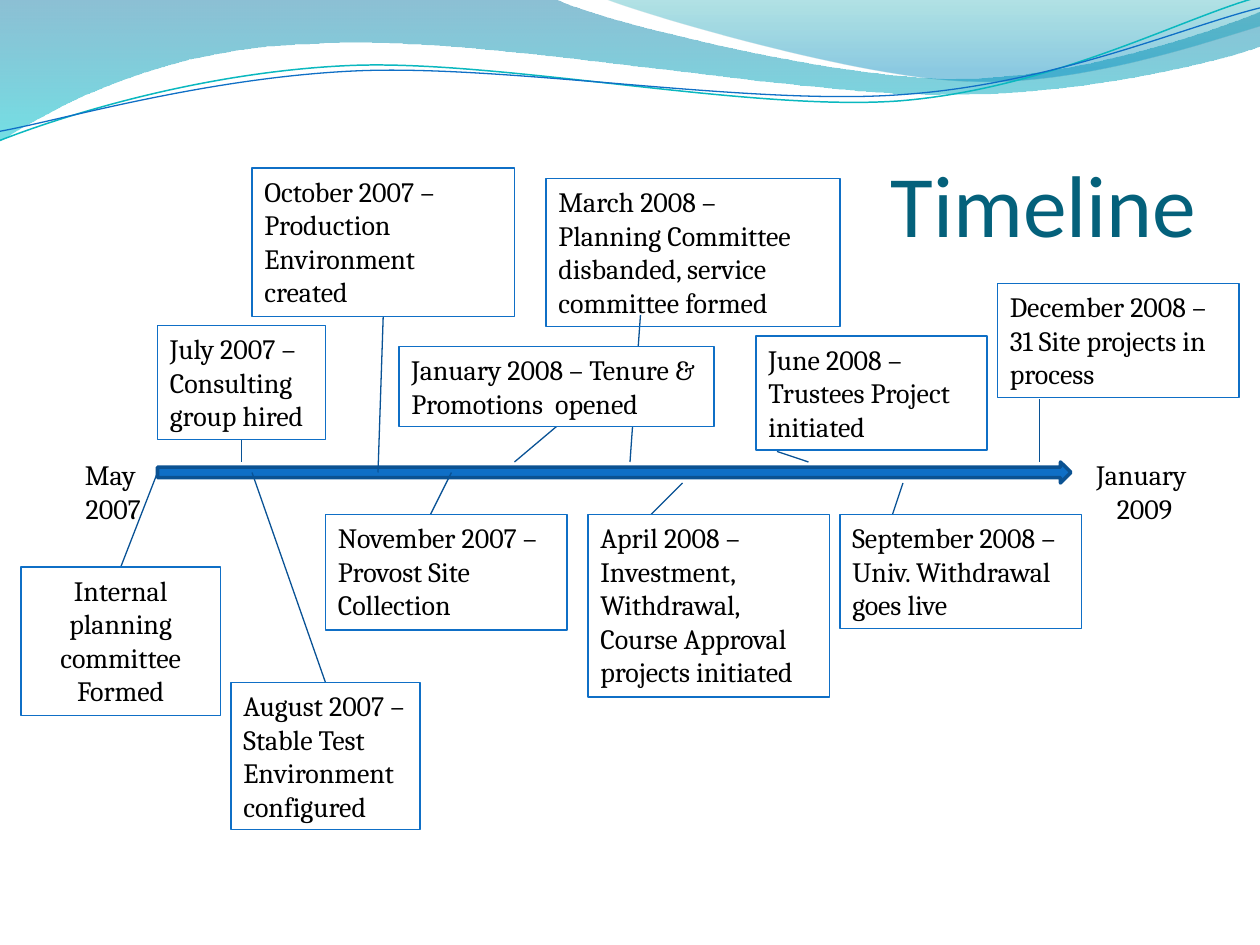
"""Build a project timeline slide with dated event boxes around a central arrow."""
from lxml import etree
from pptx import Presentation
from pptx import util as u
from pptx.dml.color import RGBColor
from pptx.enum import shapes, text
from pptx.oxml.ns import qn

PX = 914400 // 96
COLORS = {"title": "04617B", "text": "000000", "paper": "FFFFFF", "accent": "0F6FC6",
          "arrow_edge": "0B5292", "leader": "095295", "teal": "0AB8BF",
          "deep_blue": "0074A1", "aqua": "00C6CF", "sea": "00A1A9", "sky": "008BBF"}

WAVE_FILLS = [
    ([(0, 0), (422, -1), (457, 16, 637, 60, 728, 60), (819, 60, 920, 25, 960, 9),
      (961, 35), (944, 42, 835, 73, 716, 72), (597, 72, 367, 27, 247, 33),
      (124, 35, 44, 80, -1, 108)],
     [(0, "deep_blue", 45), (1, "aqua", 55)]),
    ([(460, -1), (489, 11, 655, 60, 738, 62), (822, 66, 923, 31, 960, 20), (960, 0)],
     [(0, "sea", 30), (0.8, "sky", 45)]),
]
WAVE_LINES = [
    ([(0, 107), (46, 89, 152, 55, 266, 50), (379, 45, 569, 85, 684, 77),
      (800, 68, 900, 14, 958, -2)], "teal", 0.85),
    ([(0, 100), (45, 92, 157, 59, 272, 54), (387, 49, 573, 81, 688, 72),
      (803, 64, 903, 20, 960, 6)], "accent", 0.75),
]
TITLE = ("Timeline", (48, 74, 864, 120))
ARROW = (120, 352, 696, 16)
ENDS = [("May\n 2007", (32, 344, 104, 61)), ("January  2009", (816, 344, 112, 61))]
EVENTS = [
    ("July 2007 – Consulting group hired", (120, 248, 128, 87), (184, 352, 184, 335)),
    ("August 2007 – Stable Test Environment configured", (176, 520, 144, 112),
     (192, 360, 248, 520)),
    ("Internal planning committee Formed", (16, 432, 152, 113), (120, 360, 92, 432)),
    ("October 2007 – \vProduction Environment created", (192, 128, 200, 113),
     (292, 241, 288, 360)),
    ("November 2007 – \vProvost Site Collection", (248, 392, 184, 88), (344, 360, 328, 392)),
    ("April 2008 – \vInvestment, Withdrawal, Course Approval projects initiated",
     (448, 392, 184, 139), (520, 368, 496, 392)),
    ("March 2008 –\vPlanning Committee disbanded, service committee formed",
     (416, 136, 224, 113), (480, 352, 488, 240)),
    ("January 2008 – Tenure & Promotions  opened", (304, 264, 240, 61), (392, 352, 424, 325)),
    ("June 2008 –\nTrustees Project initiated", (576, 256, 176, 87), (616, 352, 592, 344)),
    ("September 2008 –\vUniv. Withdrawal goes live", (640, 392, 184, 87),
     (688, 368, 680, 392)),
    ("December 2008 – \v31 Site projects in process", (760, 216, 184, 87),
     (792, 352, 792, 304)),
]
CENTERED = {"Internal planning committee Formed"}
FILLED = {"January 2008 – Tenure & Promotions  opened"}


def emu(lengths):
    return [u.Emu(length * PX) for length in lengths]


def rgb(name):
    return RGBColor.from_string(COLORS[name])


def set_line(shape, color, points):
    shape.line.color.rgb = rgb(color)
    shape.line.width = u.Pt(points)


def add_wave(slide, segments, close):
    start, *rest = segments
    corners = [emu(part[i:i + 2]) for part in rest for i in range(0, len(part), 2)]
    builder = slide.shapes.build_freeform(*emu(start))
    builder.add_line_segments(corners, close=close)
    wave = builder.convert_to_shape()
    wave.shadow.inherit = False
    steps = iter(list(wave.element.spPr.iter(qn("a:lnTo"))))
    for part in rest:
        first = next(steps)
        if len(part) == 6:
            first.tag = qn("a:cubicBezTo")
            for step in (next(steps), next(steps)):
                first.append(step[0])
                step.getparent().remove(step)
    return wave


def add_filled_wave(slide, segments, stops):
    wave = add_wave(slide, segments, True)
    wave.line.fill.background()
    wave.fill.gradient()
    wave.fill.gradient_angle = 270
    for stop, (position, color, _) in zip(wave.fill.gradient_stops, stops):
        stop.position = position
        stop.color.rgb = rgb(color)
    for node, (_, _, opacity) in zip(wave.element.spPr.iter(qn("a:srgbClr")), stops):
        etree.SubElement(node, qn("a:alpha"), val=str(opacity * 1000))


def add_line_wave(slide, segments, color, points):
    wave = add_wave(slide, segments, False)
    wave.fill.background()
    set_line(wave, color, points)


def style(frame, font, size, color, align):
    for para in frame.paragraphs:
        para.alignment = align
        para.font.name = font
        para.font.size = u.Pt(size)
        para.font.color.rgb = rgb(color)


def set_title(slide, words, place):
    title = slide.shapes.title
    title.left, title.top, title.width, title.height = emu(place)
    frame = title.text_frame
    frame.text = words
    frame.auto_size = text.MSO_AUTO_SIZE.NONE
    frame.vertical_anchor = text.MSO_ANCHOR.BOTTOM
    frame.margin_left = frame.margin_right = frame.margin_bottom = 0
    style(frame, "Calibri", 50, "title", text.PP_ALIGN.RIGHT)


def add_label(slide, words, place, centered):
    box = slide.shapes.add_textbox(*emu(place))
    frame = box.text_frame
    frame.word_wrap = True
    frame.auto_size = text.MSO_AUTO_SIZE.SHAPE_TO_FIT_TEXT
    frame.text = words
    align = text.PP_ALIGN.CENTER if centered else text.PP_ALIGN.LEFT
    style(frame, "Cambria", 16, "text", align)
    return box


def add_arrow(slide):
    arrow = slide.shapes.add_shape(shapes.MSO_SHAPE.RIGHT_ARROW, *emu(ARROW))
    arrow.shadow.inherit = False
    arrow.fill.solid()
    arrow.fill.fore_color.rgb = rgb("accent")
    set_line(arrow, "arrow_edge", 2)


def add_leader(slide, ends):
    leader = slide.shapes.add_connector(shapes.MSO_CONNECTOR.STRAIGHT, *emu(ends))
    set_line(leader, "leader", 0.75)
    etree.SubElement(leader.element.spPr, qn("a:effectLst"))


def add_event(slide, words, place, ends):
    add_leader(slide, ends)
    box = add_label(slide, words, place, words in CENTERED)
    set_line(box, "accent", 0.75)
    if words in FILLED:
        box.fill.solid()
        box.fill.fore_color.rgb = rgb("paper")


def main():
    deck = Presentation()
    deck.slide_width, deck.slide_height = emu((960, 720))
    slide = deck.slides.add_slide(deck.slide_layouts[5])
    for wave in WAVE_FILLS:
        add_filled_wave(slide, *wave)
    for wave in WAVE_LINES:
        add_line_wave(slide, *wave)
    set_title(slide, *TITLE)
    add_arrow(slide)
    for words, place in ENDS:
        add_label(slide, words, place, True)
    for event in EVENTS:
        add_event(slide, *event)
    deck.save("out.pptx")


if __name__ == "__main__":
    main()
